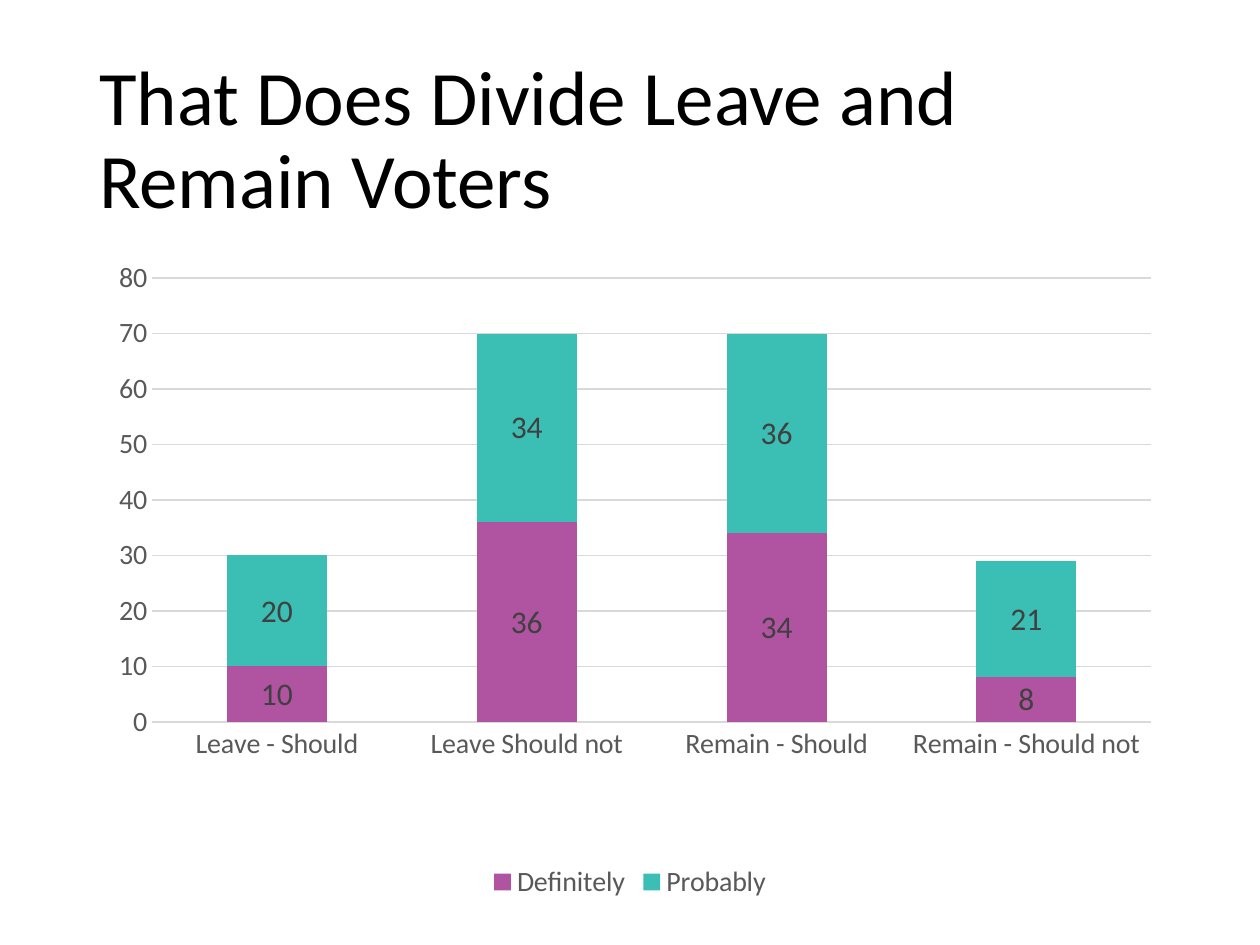
"""Build a slide with a stacked column chart of Leave and Remain voters."""
from dataclasses import dataclass

from lxml import etree
from pptx import Presentation
from pptx.chart.data import CategoryChartData
from pptx.dml.color import RGBColor
from pptx.enum import chart as kinds, text
from pptx.oxml import ns
from pptx.util import Cm, Pt

FONT = "Calibri"
HUES = {
    "title": "000000",
    "axis": "595959",
    "label": "404040",
    "grid": "D9D9D9",
    "plum": "B053A1",
    "teal": "3BBEB4",
}
GROUPS = ["Leave - Should", "Leave Should not", "Remain - Should", "Remain - Should not"]
LEFT, WIDTH = Cm(1.75), Cm(21.9)


@dataclass
class Answer:
    name: str
    votes: tuple
    hue: str


ANSWERS = [
    Answer("Definitely", (10, 36, 34, 8), "plum"),
    Answer("Probably", (20, 34, 36, 21), "teal"),
]


def tint(hue: str) -> RGBColor:
    return RGBColor.from_string(HUES[hue])


def style(font, size: float, hue: str) -> None:
    font.name, font.size = FONT, Pt(size)
    font.color.rgb = tint(hue)


def rule(line) -> None:
    line.color.rgb = tint("grid")
    line.width = Pt(0.75)


def add_title(slide, words: str) -> None:
    frame = slide.shapes.add_textbox(LEFT, Cm(1.02), WIDTH, Cm(3.68)).text_frame
    frame.word_wrap = True
    frame.vertical_anchor = text.MSO_ANCHOR.MIDDLE
    frame.text = words
    line = frame.paragraphs[0]
    line.line_spacing = 0.9
    style(line.runs[0].font, 44, "title")


def place_plot(chart, **box: float) -> None:
    area = chart._chartSpace.find(".//" + ns.qn("c:plotArea"))
    for old in area.findall(ns.qn("c:layout")):
        area.remove(old)
    layout = etree.Element(ns.qn("c:layout"))
    area.insert(0, layout)
    manual = etree.SubElement(layout, ns.qn("c:manualLayout"))
    parts = {"layoutTarget": "inner", "xMode": "edge", "yMode": "edge", **box}
    for tag, val in parts.items():
        etree.SubElement(manual, ns.qn("c:" + tag), val=str(val))


def add_votes(slide, answers: list[Answer]) -> None:
    data = CategoryChartData()
    data.categories = GROUPS
    for item in answers:
        data.add_series(item.name, item.votes)
    kind = kinds.XL_CHART_TYPE.COLUMN_STACKED
    chart = slide.shapes.add_chart(kind, LEFT, Cm(5.08), WIDTH, Cm(13.16), data).chart
    style(chart.font, 10, "title")
    chart.has_title = False
    place_plot(chart, x=0.06, y=0.04, w=0.92, h=0.68)

    for axis in (chart.category_axis, chart.value_axis):
        axis.major_tick_mark = axis.minor_tick_mark = kinds.XL_TICK_MARK.NONE
        style(axis.tick_labels.font, 16, "axis")
    rule(chart.category_axis.format.line)
    scale = chart.value_axis
    scale.minimum_scale, scale.maximum_scale, scale.major_unit = 0, 80, 10
    scale.format.line.fill.background()
    rule(scale.major_gridlines.format.line)

    chart.has_legend = True
    chart.legend.position = kinds.XL_LEGEND_POSITION.BOTTOM
    chart.legend.include_in_layout = False
    style(chart.legend.font, 16, "axis")

    plot = chart.plots[0]
    plot.gap_width, plot.overlap, plot.vary_by_categories = 150, 100, False
    for bars, item in zip(plot.series, answers):
        bars.format.fill.solid()
        bars.format.fill.fore_color.rgb = tint(item.hue)
        labels = bars.data_labels
        labels.show_value = True
        labels.position = kinds.XL_LABEL_POSITION.CENTER
        style(labels.font, 18, "label")


def main() -> None:
    deck = Presentation()
    deck.slide_width, deck.slide_height = Cm(25.4), Cm(19.05)
    slide = deck.slides.add_slide(deck.slide_layouts[6])
    add_title(slide, "That Does Divide Leave and Remain Voters")
    add_votes(slide, ANSWERS)
    deck.save("out.pptx")


if __name__ == "__main__":
    main()
